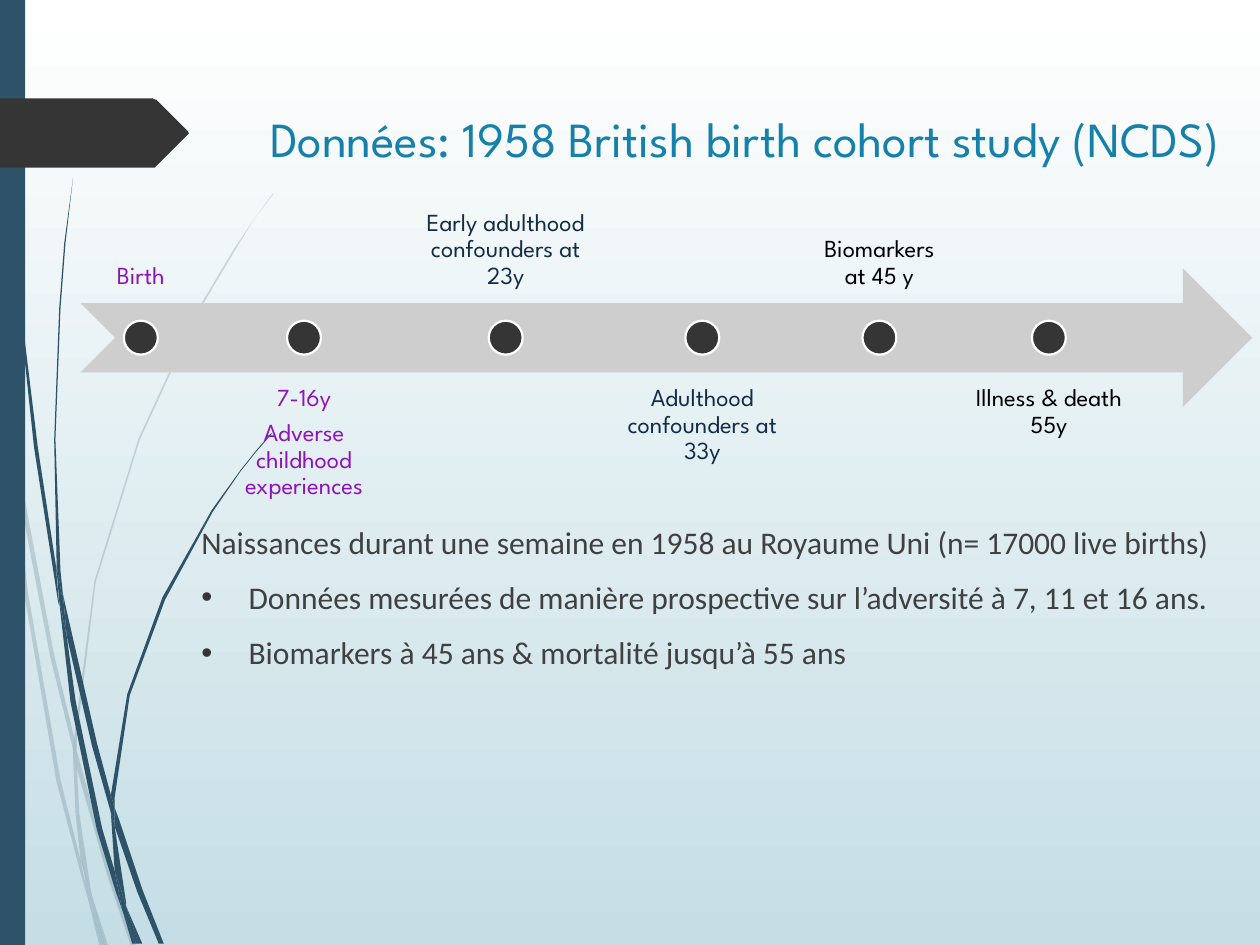
"""Build the 1958 British birth cohort slide with its timeline and curved wisps."""
from dataclasses import dataclass

from lxml.etree import SubElement
from pptx import Presentation
from pptx.dml.color import RGBColor as Rgb
from pptx.enum.shapes import MSO_SHAPE as Shape
from pptx.enum.text import MSO_ANCHOR as Anchor, PP_ALIGN as Align
from pptx.oxml.ns import qn
from pptx.util import Pt


@dataclass(frozen=True)
class Theme:
    sky: str = "FFFFFF"
    sea: str = "C5DEE5"
    navy: str = "2E5369"
    dark: str = "353535"
    arrow: str = "CECECE"
    title: str = "1581AA"
    body: str = "404040"
    childhood: str = "9013B9"
    adulthood: str = "132C48"
    outcome: str = "000000"
    heading_font: str = "League Spartan"
    body_font: str = "Calibri"
    title_size: int = 28
    body_size: int = 18
    label_size: int = 14


THEME = Theme()

TITLE = "Données: 1958 British birth cohort study (NCDS)"
INTRO = "Naissances durant une semaine en 1958 au Royaume Uni (n= 17000 live births)"
FINDINGS = [
    "Données mesurées de manière prospective sur l’adversité à 7, 11 et 16 ans.",
    "Biomarkers à 45 ans & mortalité jusqu’à 55 ans",
]
MILESTONES = [
    (69, THEME.childhood, ["Birth"]),
    (114.5, THEME.childhood, ["7-16y", "Adverse childhood experiences"]),
    (113, THEME.adulthood, ["Early adulthood confounders at 23y"]),
    (108.7, THEME.adulthood, ["Adulthood confounders at 33y"]),
    (90.7, THEME.outcome, ["Biomarkers at 45 y"]),
    (100, THEME.outcome, ["Illness & death 55y"]),
]

GRID = Pt(0.72)
PALE_WISPS = [
    [(8, 350), (6, 322), (0, 282), (0, 299), (7, 344)],
    [(40, 522), (59, 599), (59, 586), (43, 520), (10, 345), (12, 376)],
    [(64, 607), (61, 596), (61, 610), (85, 694), (104, 751), (108, 751), (88, 692)],
    [(83, 751), (86, 751), (73, 711)],
    [(64, 683), (48, 619), (22, 469), (12, 376), (8, 350), (19, 470), (45, 621),
     (64, 693), (70, 714), (69, 707)],
    [(58, 599), (60, 646), (64, 683), (67, 692), (73, 711), (72, 706), (63, 646),
     (61, 610), (61, 608)],
    [(61, 584), (76, 462), (111, 349), (159, 245), (187, 198), (201, 175), (217, 154),
     (217, 153), (201, 175), (186, 197), (158, 244), (110, 348), (75, 461), (59, 584),
     (59, 586), (61, 596)],
    [(70, 714), (79, 751), (82, 751)],
    [(61, 608), (61, 610), (61, 596), (59, 586), (58, 599)],
    [(67, 692), (65, 683), (69, 707), (70, 714), (82, 751), (83, 751), (73, 711)],
]
NAVY_WISPS = [
    [(5, 110), (14, 233), (27, 355), (46, 477), (47, 481), (45, 457), (45, 453),
     (30, 355), (15, 232), (6, 109), (4, 48), (3, 0), (2, 0), (3, 48)],
    [(73, 592), (88, 645), (88, 633), (88, 631), (77, 590), (50, 472), (53, 505)],
    [(94, 649), (91, 641), (91, 656), (109, 708), (126, 749), (130, 749), (113, 706)],
    [(91, 691), (81, 657), (60, 556), (53, 505), (47, 477), (56, 557), (77, 659),
     (92, 708), (97, 722), (96, 717)],
    [(50, 472), (48, 453), (44, 349), (48, 245), (52, 193), (58, 141), (58, 141),
     (51, 193), (47, 245), (43, 349), (45, 449), (49, 472)],
    [(110, 749), (113, 749), (100, 719)],
    [(47, 477), (53, 505), (50, 472), (49, 472), (45, 449), (45, 453)],
    [(91, 633), (103, 552), (131, 476), (169, 406), (191, 374), (203, 359), (216, 344),
     (215, 344), (203, 358), (191, 373), (168, 405), (129, 474), (101, 551), (88, 631),
     (91, 641)],
    [(97, 722), (105, 749), (108, 749)],
    [(88, 645), (91, 691), (96, 706), (100, 719), (100, 716), (91, 656), (90, 651)],
    [(88, 645), (90, 651), (91, 656), (91, 641), (88, 631), (88, 633)],
    [(96, 706), (91, 691), (96, 717), (97, 722), (108, 749), (110, 749), (100, 719)],
]
PAGE_TAG = [(149, 107), (124, 132), (123, 133), (121, 133), (0, 133), (0, 78),
            (121, 78), (123, 79), (124, 79), (149, 104), (149.5, 105.5)]

ARROW_LEFT, ARROW_TOP, ARROW_WIDTH, ARROW_HEIGHT = 46, 153.4, 669.6, 79.2
LABEL_GAP, LABEL_SHIFT, LABEL_INSET = 1.5, 59.1, 7.9
DOT = 19.4


def paint(part, color, outline=None):
    part.shadow.inherit = False
    part.fill.solid()
    part.fill.fore_color.rgb = Rgb.from_string(color)
    if outline:
        part.line.color.rgb = Rgb.from_string(outline)
        part.line.width = Pt(1.25)
    else:
        part.line.fill.background()


def preset(slide, kind, left, top, width, height, color, outline=None):
    part = slide.shapes.add_shape(kind, Pt(left), Pt(top), Pt(width), Pt(height))
    paint(part, color, outline)


def outline_shape(slide, points, color, opacity=100):
    builder = slide.shapes.build_freeform(*points[0], scale=GRID)
    builder.add_line_segments(points[1:], close=True)
    part = builder.convert_to_shape()
    paint(part, color)
    if opacity < 100:
        tint = part.fill._xPr.find(qn("a:solidFill"))[0]
        SubElement(tint, qn("a:alpha")).set("val", str(opacity * 1000))


def text_frame(slide, left, top, width, height, anchor=Anchor.TOP, inset=None):
    frame = slide.shapes.add_textbox(Pt(left), Pt(top), Pt(width), Pt(height)).text_frame
    frame.word_wrap = True
    frame.vertical_anchor = anchor
    if inset is not None:
        frame.margin_left = frame.margin_right = Pt(inset)
        frame.margin_top = frame.margin_bottom = Pt(inset)
    return frame


def write(frame, index, words, font, size, color, align=Align.LEFT):
    paragraph = frame.add_paragraph() if index else frame.paragraphs[0]
    paragraph.alignment = align
    run = paragraph.add_run()
    run.text = words
    run.font.name = font
    run.font.size = Pt(size)
    run.font.color.rgb = Rgb.from_string(color)
    return paragraph


def hang(paragraph, bulleted):
    paragraph.space_before = Pt(10)
    props = paragraph._p.get_or_add_pPr()
    props.set("marL", str(Pt(27)))
    props.set("indent", str(Pt(-27)))
    if bulleted:
        SubElement(SubElement(props, qn("a:buClr")), qn("a:srgbClr")).set("val", THEME.dark)
        SubElement(props, qn("a:buFont")).set("typeface", "Arial")
        SubElement(props, qn("a:buChar")).set("char", "•")
    else:
        SubElement(props, qn("a:buNone"))


def draw_backdrop(slide):
    fill = slide.background.fill
    fill.gradient()
    fill.gradient_angle = 270
    for stop, color in zip(fill.gradient_stops, (THEME.sky, THEME.sea)):
        stop.color.rgb = Rgb.from_string(color)
    for wisps, opacity in ((PALE_WISPS, 20), (NAVY_WISPS, 100)):
        for wisp in wisps:
            outline_shape(slide, wisp, THEME.navy, opacity)
    preset(slide, Shape.RECTANGLE, 0, 0, 14.4, 540, THEME.navy)
    outline_shape(slide, PAGE_TAG, THEME.dark)


def draw_words(slide):
    body = text_frame(slide, 108, 295.2, 612, 201.6)
    for index, words in enumerate([INTRO, *FINDINGS]):
        line = write(body, index, words, THEME.body_font, THEME.body_size, THEME.body)
        hang(line, bulleted=index > 0)
    title = text_frame(slide, 131, 58.3, 589, 28.8)
    write(title, 0, TITLE, THEME.heading_font, THEME.title_size, THEME.title, Align.CENTER)


def draw_timeline(slide):
    preset(slide, Shape.NOTCHED_RIGHT_ARROW, ARROW_LEFT, ARROW_TOP,
           ARROW_WIDTH, ARROW_HEIGHT, THEME.arrow)
    left = ARROW_LEFT
    for place, (width, color, lines) in enumerate(MILESTONES):
        above = place % 2 == 0
        top = ARROW_TOP + (-LABEL_SHIFT if above else LABEL_SHIFT)
        label = text_frame(slide, left, top, width, ARROW_HEIGHT,
                           Anchor.BOTTOM if above else Anchor.TOP, LABEL_INSET)
        for index, words in enumerate(lines):
            line = write(label, index, words, THEME.heading_font, THEME.label_size,
                         color, Align.CENTER)
            line.line_spacing = 0.9
            line.space_after = Pt(4.9)
        preset(slide, Shape.OVAL, left + (width - DOT) / 2,
               ARROW_TOP + (ARROW_HEIGHT - DOT) / 2, DOT, DOT, THEME.dark, THEME.sky)
        left += width + LABEL_GAP


def main():
    deck = Presentation()
    deck.slide_width, deck.slide_height = Pt(720), Pt(540)
    slide = deck.slides.add_slide(deck.slide_layouts[6])
    draw_backdrop(slide)
    draw_words(slide)
    draw_timeline(slide)
    deck.save("out.pptx")


if __name__ == "__main__":
    main()
